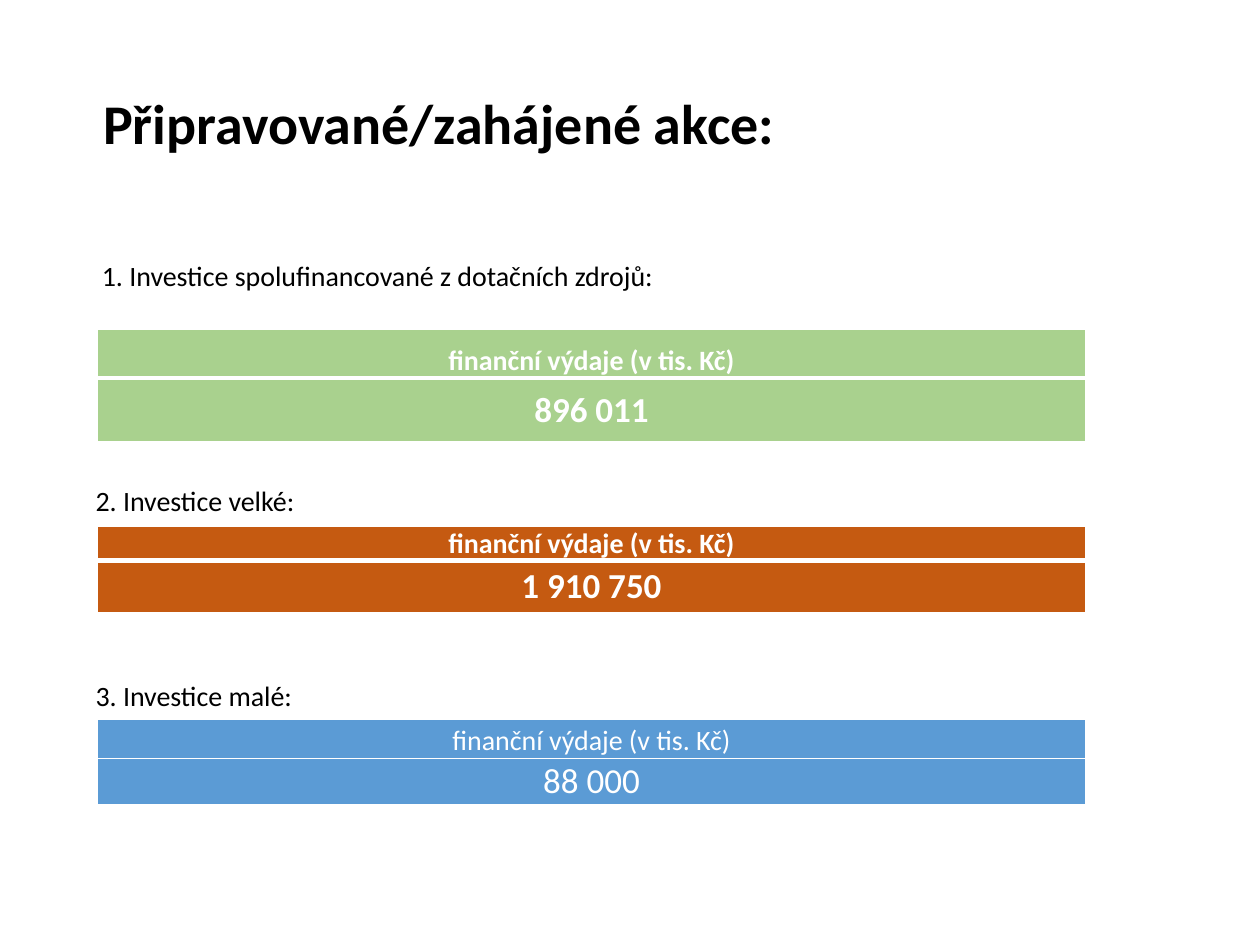
from lxml.etree import SubElement
from pptx import Presentation
from pptx.dml.color import RGBColor
from pptx.enum.text import MSO_ANCHOR, MSO_AUTO_SIZE, PP_ALIGN
from pptx.oxml.ns import qn
from pptx.util import Inches, Pt

TITLE = "Připravované/zahájené akce:"
HEADER = "finanční výdaje (v tis. Kč)"
FONT, BLACK, WHITE = "Calibri", "000000", "FFFFFF"
TABLE_LEFT, TABLE_WIDTH = 0.77, 7.85

# label, (left, top, width), amount, table top, row heights, fill, bold, divider in points
SECTIONS = [
    ("1. Investice spolufinancované z dotačních zdrojů:", (0.71, 2, 8.33),
     "896 011", 2.61, (0.39, 0.51), "A9D18E", True, 3),
    ("2. Investice velké:", (0.66, 3.79, 8.19),
     "1 910 750", 4.18, (0.26, 0.42), "C55A11", True, 3),
    ("3. Investice malé:", (0.66, 5.34, 8.19),
     "88 000", 5.71, (0.31, 0.37), "5B9BD5", False, 1),
]


def rgb(color):
    return RGBColor.from_string(color)


def set_font(p, size, color, bold=False):
    p.font.name = FONT
    p.font.size = Pt(size)
    p.font.bold = bold
    p.font.color.rgb = rgb(color)


def add_label(slide, text, place, height, size, bold=False):
    left, top, width = place
    box = slide.shapes.add_textbox(Inches(left), Inches(top), Inches(width), Inches(height))
    tf = box.text_frame
    tf.word_wrap = True
    tf.auto_size = MSO_AUTO_SIZE.SHAPE_TO_FIT_TEXT
    tf.text = text
    set_font(tf.paragraphs[0], size, BLACK, bold)


def fill_cell(cell, text, size, bold, anchor, fill, borders):
    """Write and style a cell; borders gives left, right, top and bottom widths."""
    cell.text = text
    cell.vertical_anchor = anchor
    cell.margin_left = cell.margin_right = Inches(0.05)
    cell.margin_top = cell.margin_bottom = 0
    p = cell.text_frame.paragraphs[0]
    p.alignment = PP_ALIGN.CENTER
    set_font(p, size, WHITE, bold)
    tc_pr = cell._tc.get_or_add_tcPr()
    for side, width in zip("LRTB", borders):
        line = SubElement(tc_pr, qn(f"a:ln{side}"), w=str(Pt(width)))
        SubElement(SubElement(line, qn("a:solidFill")), qn("a:srgbClr"), val=WHITE)
    cell.fill.solid()
    cell.fill.fore_color.rgb = rgb(fill)


def add_amount_table(slide, amount, top, heights, fill, bold, divider):
    table = slide.shapes.add_table(
        2, 1, Inches(TABLE_LEFT), Inches(top), Inches(TABLE_WIDTH), Inches(sum(heights))).table
    for row, height in zip(table.rows, heights):
        row.height = Inches(height)
    fill_cell(table.cell(0, 0), HEADER, 16, bold, MSO_ANCHOR.BOTTOM, fill, (1, 1, 1, divider))
    fill_cell(table.cell(1, 0), amount, 20, bold, MSO_ANCHOR.MIDDLE, fill, (1, 1, divider, 1))


def main():
    prs = Presentation()
    prs.slide_width, prs.slide_height = Inches(10), Inches(7.5)
    slide = prs.slides.add_slide(prs.slide_layouts[6])
    add_label(slide, TITLE, (0.72, 0.65, 8.32), 0.64, 32, bold=True)
    for label, place, *table_values in SECTIONS:
        add_label(slide, label, place, 0.37, 16)
        add_amount_table(slide, *table_values)
    prs.save("out.pptx")


if __name__ == "__main__":
    main()
